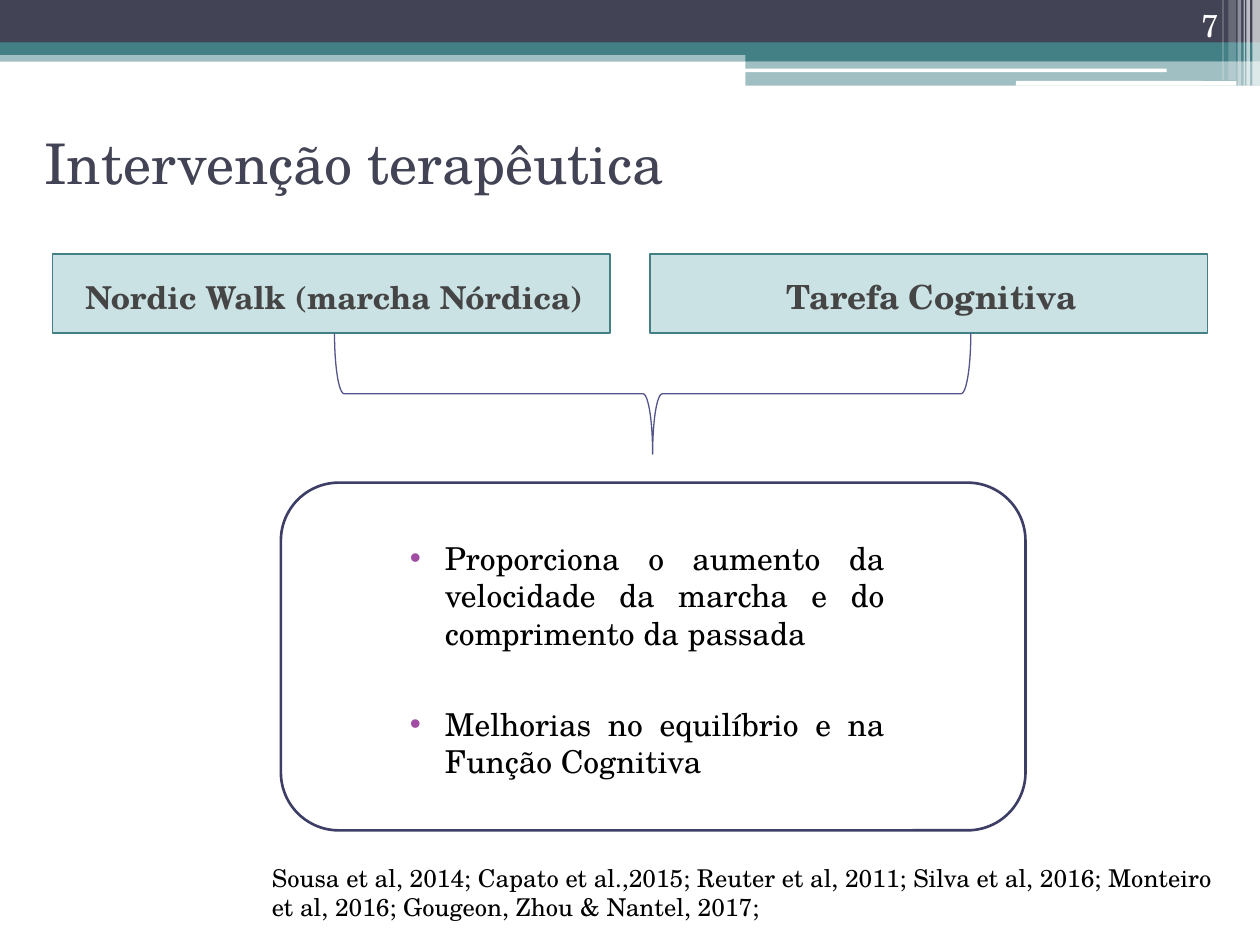
from lxml import etree
from pptx import Presentation
from pptx.dml.color import RGBColor
from pptx.enum.shapes import MSO_SHAPE
from pptx.enum.text import MSO_ANCHOR, MSO_AUTO_SIZE, PP_ALIGN
from pptx.oxml.ns import qn
from pptx.util import Pt

RECTANGLE, ROUNDED = MSO_SHAPE.RECTANGLE, MSO_SHAPE.ROUNDED_RECTANGLE
BRACE = MSO_SHAPE.LEFT_BRACE
TOP, MIDDLE, BOTTOM = MSO_ANCHOR.TOP, MSO_ANCHOR.MIDDLE, MSO_ANCHOR.BOTTOM
LEFT, CENTER, RIGHT = PP_ALIGN.LEFT, PP_ALIGN.CENTER, PP_ALIGN.RIGHT
JUSTIFY = PP_ALIGN.JUSTIFY
NO_AUTOFIT = MSO_AUTO_SIZE.NONE
FONT = "TeX Gyre Schola"
COLORS = {
    "navy": "424456", "teal": "438086", "box": "328E97", "white": "FFFFFF",
    "heading": "454545", "black": "000000", "bullet": "A04DA3",
    "brace": "53548A", "frame": "3D3E66",
}


def paint(shape, fill=None, opacity=100, line=None, width=1):
    """Set fill with opacity in percent, and outline; None means neither."""
    if fill:
        shape.fill.solid()
        shape.fill.fore_color.rgb = RGBColor.from_string(COLORS[fill])
        if opacity < 100:
            color = shape.fill._xPr.find(qn("a:solidFill"))[0]
            etree.SubElement(color, qn("a:alpha"), val=str(opacity * 1000))
    else:
        shape.fill.background()
    if line:
        shape.line.color.rgb = RGBColor.from_string(COLORS[line])
        shape.line.width = Pt(width)
    else:
        shape.line.fill.background()


def write(shape, box, paragraphs, size, color, align=LEFT, anchor=TOP, bold=False):
    """Place a text shape and fill it with equally formatted paragraphs."""
    shape.left, shape.top, shape.width, shape.height = map(Pt, box)
    frame = shape.text_frame
    frame.text = "\n".join(paragraphs)
    frame.word_wrap, frame.auto_size = True, NO_AUTOFIT
    frame.vertical_anchor = anchor
    font_format = {"name": FONT, "size": Pt(size), "bold": bold}
    for paragraph in frame.paragraphs:
        paragraph.alignment = align
        paragraph.space_before = Pt(0)
        font = paragraph.runs[0].font
        for attribute, value in font_format.items():
            setattr(font, attribute, value)
        font.color.rgb = RGBColor.from_string(COLORS[color])


presentation = Presentation()
presentation.slide_width, presentation.slide_height = Pt(720), Pt(540)
slide = presentation.slides.add_slide(presentation.slide_layouts[4])
shapes = slide.shapes
title, left_heading, benefits, right_heading, unused = slide.placeholders
unused.element.getparent().remove(unused.element)

# Header bands and the stripes at the right edge: kind, box, fill, opacity
header = [
    (RECTANGLE, (0, 28.8, 720, 6.5), "teal", 50),
    (RECTANGLE, (0, 0, 720, 24.5), "navy", 100),
    (RECTANGLE, (0, 24.2, 720, 7.2), "teal", 100),
    (RECTANGLE, (426, 28, 294, 7), "teal", 100),
    (RECTANGLE, (426, 34.7, 294, 14.2), "teal", 50),
    (ROUNDED, (425.5, 39.2, 241.2, 2), "white", 100),
    (ROUNDED, (580.5, 46.3, 126, 2.7), "white", 100),
]
stripes = [
    (715.7, 4.3, 49, 65), (712.2, 2, 49, 65), (710.7, 0.7, 49, 60),
    (707.2, 2, 49, 40), (702, 4.3, 46, 20), (698.5, 0.7, 46, 30),
]
header += [(RECTANGLE, (left, 0, width, height), "white", opacity)
           for left, width, height, opacity in stripes]
for kind, box, fill, opacity in header:
    shape = shapes.add_shape(kind, *map(Pt, box))
    shape.shadow.inherit = False
    paint(shape, fill, opacity)

write(title, (18, 50.4, 660, 84.2), ["Intervenção terapêutica"], 32, "navy", anchor=MIDDLE)

# The two interventions
headings = [
    (left_heading, 30, "Nordic Walk (marcha Nórdica)", 18),
    (right_heading, 371.5, "Tarefa Cognitiva", 19),
]
for heading, left, text, size in headings:
    write(heading, (left, 145.2, 318.5, 45.2), [text], size, "heading", CENTER, MIDDLE, True)
    paint(heading, "box", 25, "teal")
    heading.text_frame.margin_left = Pt(10.5)
    heading.text_frame.margin_top = Pt(7)

# Their shared benefits
write(benefits, (218.2, 275.8, 294.5, 198.7), [
    "Proporciona o aumento da velocidade da marcha e do comprimento da passada",
    "Melhorias no equilíbrio e na Função Cognitiva",
], 18, "black", JUSTIFY)
benefits.text_frame.margin_top = Pt(32)
benefits.text_frame.paragraphs[1].space_before = Pt(30)
for paragraph in benefits.text_frame.paragraphs:
    properties = paragraph._p.get_or_add_pPr()
    properties.set("marL", str(Pt(28.8)))
    properties.set("indent", str(Pt(-20)))
    bullet_color = etree.SubElement(properties, qn("a:buClr"))
    etree.SubElement(bullet_color, qn("a:srgbClr"), val=COLORS["bullet"])
    etree.SubElement(properties, qn("a:buFont"), typeface="Arial")
    etree.SubElement(properties, qn("a:buChar"), char="•")

brace = shapes.add_shape(BRACE, Pt(338.4), Pt(43.2), Pt(69.1), Pt(363.6))
brace.rotation = 270
brace.adjustments[0], brace.adjustments[1] = 0.08, 0.5
frame = shapes.add_shape(ROUNDED, Pt(160.5), Pt(275.8), Pt(425.5), Pt(198.7))
for shape, line, width in [(brace, "brace", 0.75), (frame, "frame", 1.5)]:
    shape.shadow.inherit = False
    paint(shape, line=line, width=width)

# Slide number and sources
notes = [
    ((643.7, 0, 59.8, 28.8), "7", 18, "white", RIGHT, BOTTOM),
    ((148.3, 489.6, 555.8, 41),
     "Sousa et al, 2014; Capato et al.,2015; Reuter et al, 2011; Silva et al, 2016; "
     "Monteiro et al, 2016; Gougeon, Zhou & Nantel, 2017;", 14, "black", LEFT, TOP),
]
for box, text, size, color, align, anchor in notes:
    write(shapes.add_textbox(0, 0, 0, 0), box, [text], size, color, align, anchor)

presentation.save("out.pptx")
